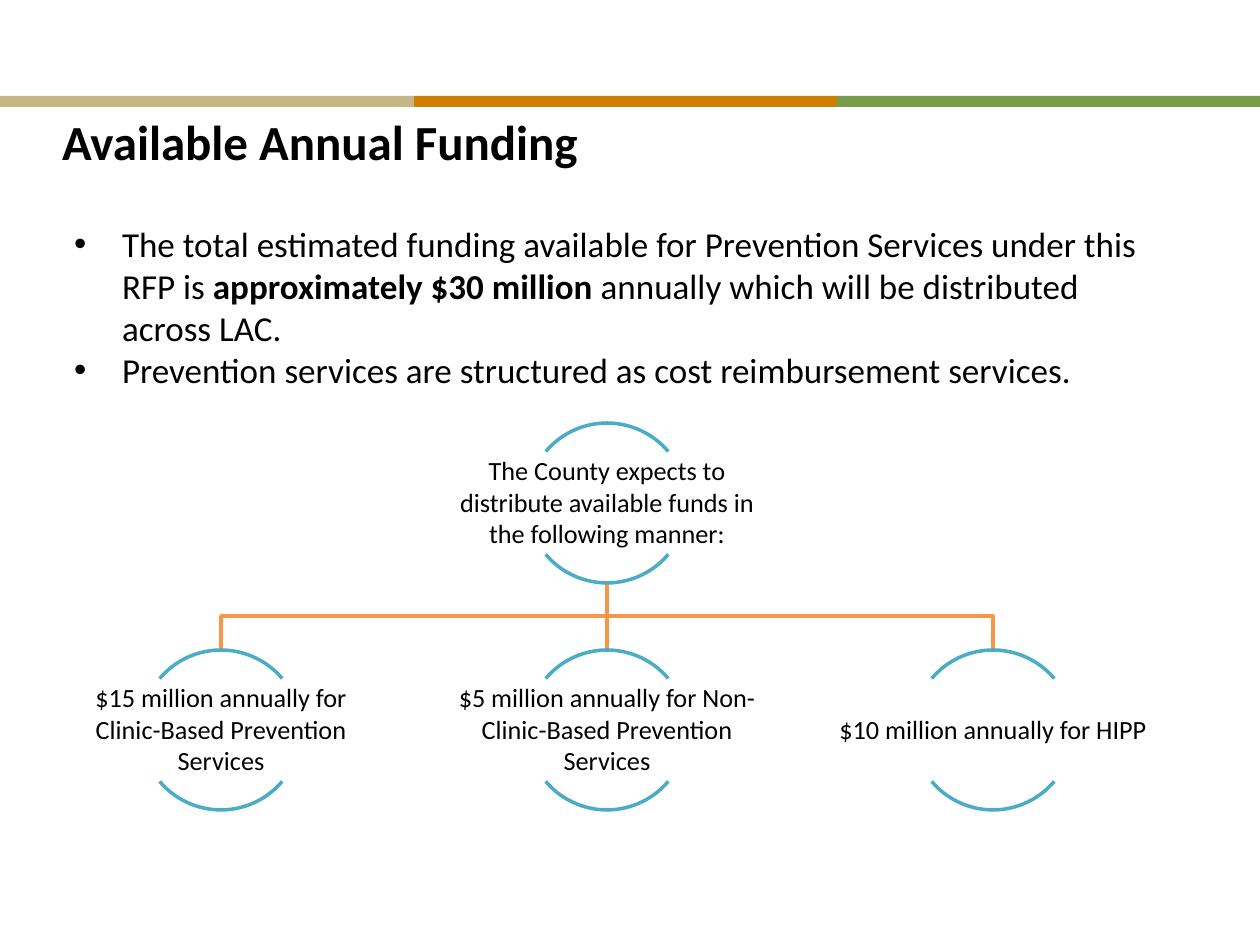
from dataclasses import dataclass
from lxml.etree import SubElement
from pptx import Presentation
from pptx.dml.color import RGBColor
from pptx.enum.shapes import MSO_CONNECTOR, MSO_SHAPE
from pptx.enum.text import MSO_ANCHOR, MSO_AUTO_SIZE, PP_ALIGN
from pptx.oxml.ns import qn
from pptx.util import Emu, Pt

SCALE = 914400 / 126


def px(n):
    return Emu(round(n * SCALE))


def tint(code):
    return RGBColor.from_string(code)


@dataclass(frozen=True)
class Theme:
    font: str = "Calibri"
    ink: str = "000000"
    bands: tuple = ("C5B783", "CF7F00", "789D4A")
    arc: str = "4BACC6"
    link: str = "F79646"
    line: int = 2
    title: int = 28
    body: int = 20
    node: int = 15


def write(frame, paras, theme, size, bold=False, align=PP_ALIGN.LEFT,
          anchor=MSO_ANCHOR.TOP, inset=0, indent=0):
    frame.word_wrap = True
    frame.auto_size = MSO_AUTO_SIZE.NONE
    frame.vertical_anchor = anchor
    frame.margin_left = frame.margin_right = px(inset)
    frame.margin_top = frame.margin_bottom = px(inset)
    for i, runs in enumerate(paras):
        para = frame.add_paragraph() if i else frame.paragraphs[0]
        para.alignment = align
        para.space_before = Pt(0)
        if indent:
            props = para._p.get_or_add_pPr()
            props.set("marL", str(px(indent)))
            props.set("indent", str(-px(indent)))
            SubElement(props, qn("a:buFont")).set("typeface", "Arial")
            SubElement(props, qn("a:buChar")).set("char", "•")
        for words, strong in runs:
            run = para.add_run()
            run.text = words
            font = run.font
            font.name = theme.font
            font.size = Pt(size)
            font.bold = bold or strong
            font.color.rgb = tint(theme.ink)


class Deck:
    def __init__(self, theme):
        self.theme = theme
        self.file = Presentation()
        self.file.slide_width = px(1260)
        self.file.slide_height = px(945)
        self.slide = self.file.slides.add_slide(self.file.slide_layouts[1])
        self.shapes = self.slide.shapes

    def holder(self, index, box, paras, **form):
        shape = self.slide.placeholders[index]
        shape.left, shape.top, shape.width, shape.height = map(px, box)
        write(shape.text_frame, paras, self.theme, **form)

    def band(self, left, right, color):
        shape = self.shapes.add_shape(
            MSO_SHAPE.RECTANGLE, px(left), px(96), px(right - left), px(11))
        shape.shadow.inherit = False
        shape.fill.solid()
        shape.fill.fore_color.rgb = tint(color)
        shape.line.fill.background()

    def stroke(self, shape, color):
        shape.line.color.rgb = tint(color)
        shape.line.width = Pt(self.theme.line)

    def line(self, x, top, end):
        link = self.shapes.add_connector(
            MSO_CONNECTOR.STRAIGHT, px(x), px(top), px(x), px(end))
        self.stroke(link, self.theme.link)
        SubElement(link._element.spPr, qn("a:effectLst"))

    def elbow(self, x, top, far, end):
        mid = (top + end) / 2
        build = self.shapes.build_freeform(x, top, SCALE)
        build.add_line_segments([(x, mid), (far, mid), (far, end)], close=False)
        shape = build.convert_to_shape()
        shape.shadow.inherit = False
        shape.fill.background()
        self.stroke(shape, self.theme.link)

    def node(self, x, top, words, size=160):
        for start, end in ((220, 320), (40, 140)):
            arc = self.shapes.add_shape(
                MSO_SHAPE.ARC, px(x - size // 2), px(top), px(size), px(size))
            arc.shadow.inherit = False
            arc.fill.background()
            arc.adjustments[0] = start * 0.6
            arc.adjustments[1] = end * 0.6
            self.stroke(arc, self.theme.arc)
        box = self.shapes.add_textbox(px(x - 160), px(top + 28), px(320), px(102))
        write(box.text_frame, [[(words, False)]], self.theme,
              size=self.theme.node, align=PP_ALIGN.CENTER,
              anchor=MSO_ANCHOR.MIDDLE, inset=1)


def main():
    theme = Theme()
    deck = Deck(theme)
    edges = (0, 414, 837, 1260)
    for left, right, color in zip(edges, edges[1:], theme.bands):
        deck.band(left, right, color)

    deck.holder(0, (62, 111, 1136, 104), [[("Available Annual Funding", True)]],
                size=theme.title)
    deck.holder(1, (74, 222, 1092, 170), [
        [("The total estimated funding available for Prevention Services "
          "under this RFP is ", False),
         ("approximately $30 million ", True),
         ("annually which will be distributed across LAC.", False)],
        [("Prevention services are structured as cost reimbursement services.",
          False)],
    ], size=theme.body, indent=48)

    mid, gap, top, low = 607, 386, 423, 650
    base = top + 160
    deck.elbow(mid, base, mid + gap, low)
    deck.line(mid, base, low)
    deck.elbow(mid, base, mid - gap, low)

    deck.node(mid, top, "The County expects to distribute available funds "
                        "in the following manner:")
    parts = ("$15 million annually for Clinic-Based Prevention Services",
             "$5 million annually for Non-Clinic-Based Prevention Services",
             "$10 million annually for HIPP")
    for i, words in enumerate(parts):
        deck.node(mid + (i - 1) * gap, low, words)

    deck.file.save("out.pptx")


if __name__ == "__main__":
    main()
